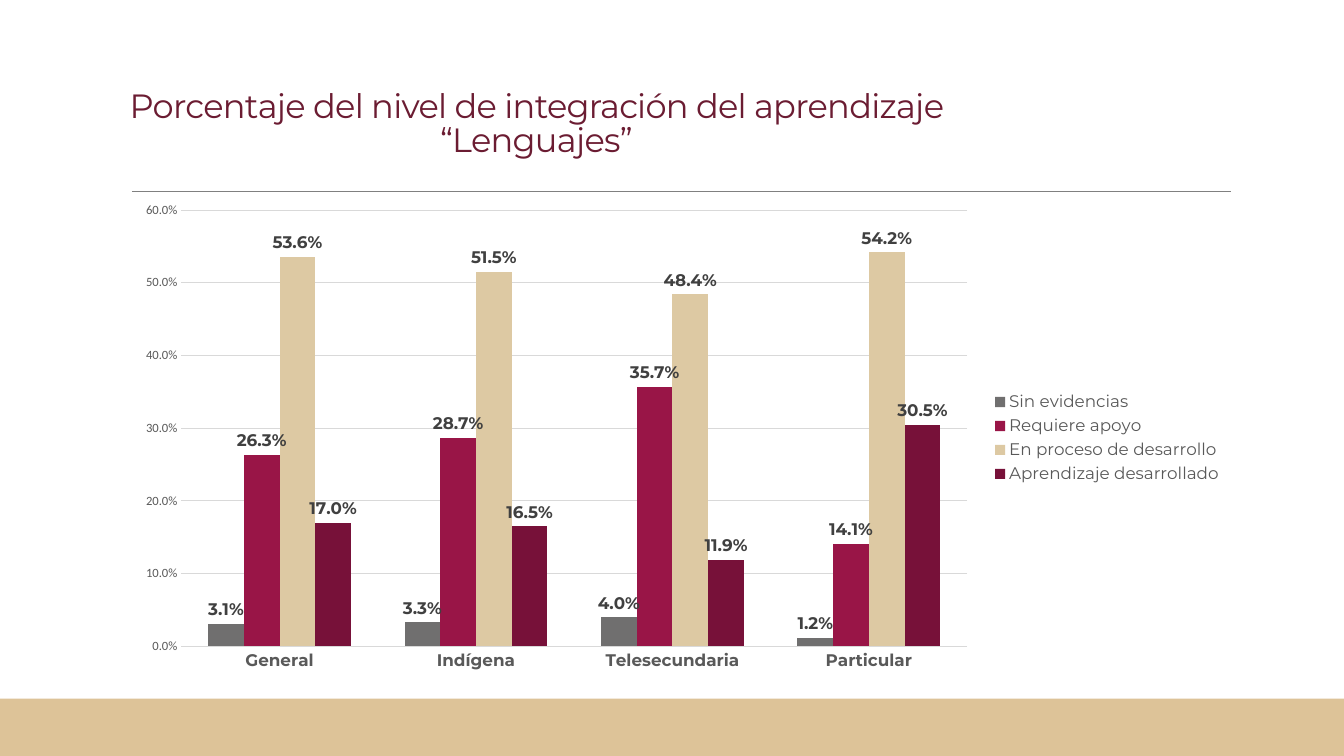
from lxml import etree
from pptx import Presentation
from pptx import util as u
from pptx.chart.data import CategoryChartData
from pptx.dml.color import RGBColor
from pptx.enum import chart as ch, shapes, text
from pptx.oxml import parse_xml
from pptx.oxml.ns import nsdecls, qn

Pt = u.Pt
HUES = {
    "title": "6B1C32", "rule": "808080", "band": "DDC398", "grid": "D9D9D9",
    "text": "595959", "label": "404040", "none": "706F6F",
    "support": "991547", "process": "DDC9A3", "done": "771139",
}
LEVELS = [
    ("Sin evidencias", "none", (0.031, 0.033, 0.04, 0.012)),
    ("Requiere apoyo", "support", (0.263, 0.287, 0.357, 0.141)),
    ("En proceso de desarrollo", "process", (0.536, 0.515, 0.484, 0.542)),
    ("Aprendizaje desarrollado", "done", (0.17, 0.165, 0.119, 0.305)),
]
SCHOOLS = ["General", "Indígena", "Telesecundaria", "Particular"]
PLOT = {"x": 0.05, "y": 0.03, "w": 0.71, "h": 0.9}


def hue(name):
    return RGBColor.from_string(HUES[name])


def apply(item, **values):
    for name, value in values.items():
        setattr(item, name, value)


def style(font, color, size, name="Montserrat", bold=False):
    apply(font, name=name, size=Pt(size), bold=bold)
    font.color.rgb = hue(color)


def add_band(slide, left, top, width, height):
    band = slide.shapes.add_shape(
        shapes.MSO_SHAPE.RECTANGLE, Pt(left), Pt(top), Pt(width), Pt(height))
    band.shadow.inherit = False
    band.fill.solid()
    band.fill.fore_color.rgb = hue("band")
    band.line.fill.background()


def add_rule(slide, left, right, top):
    rule = slide.shapes.add_connector(
        shapes.MSO_CONNECTOR.STRAIGHT, Pt(left), Pt(top), Pt(right), Pt(top))
    rule.line.color.rgb = hue("rule")
    rule.line.width = Pt(0.5)
    etree.SubElement(rule.element.spPr, qn("a:effectLst"))


def add_title(slide, words, left, top, width, height):
    box = slide.shapes.add_textbox(Pt(left), Pt(top), Pt(width), Pt(height))
    frame = box.text_frame
    apply(frame, word_wrap=True, vertical_anchor=text.MSO_ANCHOR.BOTTOM)
    para = frame.paragraphs[0]
    apply(para, alignment=text.PP_ALIGN.CENTER, line_spacing=0.85)
    run = para.add_run()
    run.text = words
    style(run.font, "title", 24)
    run.font._element.set("spc", "-50")


def place_plot(chart):
    """Fix the inner plot area as fractions of the chart frame."""
    area = chart._chartSpace.chart.plotArea
    for old in area.findall(qn("c:layout")):
        area.remove(old)
    modes = "".join(f'<c:{side}Mode val="edge"/>' for side in "xy")
    sizes = "".join(f'<c:{key} val="{val}"/>' for key, val in PLOT.items())
    area.insert(0, parse_xml(
        f'<c:layout {nsdecls("c")}><c:manualLayout>'
        f'<c:layoutTarget val="inner"/>{modes}{sizes}'
        '</c:manualLayout></c:layout>'))


def style_axes(chart):
    for axis in (chart.category_axis, chart.value_axis):
        apply(axis, major_tick_mark=ch.XL_TICK_MARK.NONE,
              minor_tick_mark=ch.XL_TICK_MARK.NONE)
        axis.format.line.fill.background()
    style(chart.category_axis.tick_labels.font, "text", 12, bold=True)
    scale = chart.value_axis
    apply(scale, minimum_scale=0, maximum_scale=0.6, major_unit=0.1,
          has_major_gridlines=True)
    apply(scale.tick_labels, number_format="0.0%", number_format_is_linked=False)
    style(scale.tick_labels.font, "text", 9, "Calibri")
    grid = scale.major_gridlines.format.line
    grid.color.rgb = hue("grid")
    grid.width = Pt(0.75)


def style_bars(plot):
    apply(plot, gap_width=150, overlap=0, vary_by_categories=False)
    for bars, (_, color, _) in zip(plot.series, LEVELS):
        bars.format.fill.solid()
        bars.format.fill.fore_color.rgb = hue(color)
        bars.invert_if_negative = False
        labels = bars.data_labels
        apply(labels, show_value=True, number_format="0.0%",
              number_format_is_linked=False,
              position=ch.XL_LABEL_POSITION.OUTSIDE_END)
        style(labels.font, "label", 12, bold=True)


def add_chart(slide, left, top, width, height):
    data = CategoryChartData(number_format="0.0%")
    data.categories = SCHOOLS
    for name, _, values in LEVELS:
        data.add_series(name, values)
    chart = slide.shapes.add_chart(
        ch.XL_CHART_TYPE.COLUMN_CLUSTERED,
        Pt(left), Pt(top), Pt(width), Pt(height), data).chart
    apply(chart.font, name="Calibri", size=Pt(10))
    apply(chart, has_title=False, has_legend=True)
    apply(chart.legend, position=ch.XL_LEGEND_POSITION.RIGHT,
          include_in_layout=False)
    style(chart.legend.font, "text", 12)
    style_axes(chart)
    style_bars(chart.plots[0])
    place_plot(chart)


def main():
    deck = Presentation()
    apply(deck, slide_width=Pt(960), slide_height=Pt(540))
    slide = deck.slides.add_slide(deck.slide_layouts[6])
    add_rule(slide, 94.3, 879, 136.8)
    add_band(slide, 0, 499, 960, 41)
    add_title(slide, "Porcentaje del nivel de integración del aprendizaje “Lenguajes”",
              74.2, 41, 617.8, 76.3)
    add_chart(slide, 90, 139.7, 790.6, 346.3)
    deck.save("out.pptx")


if __name__ == "__main__":
    main()
